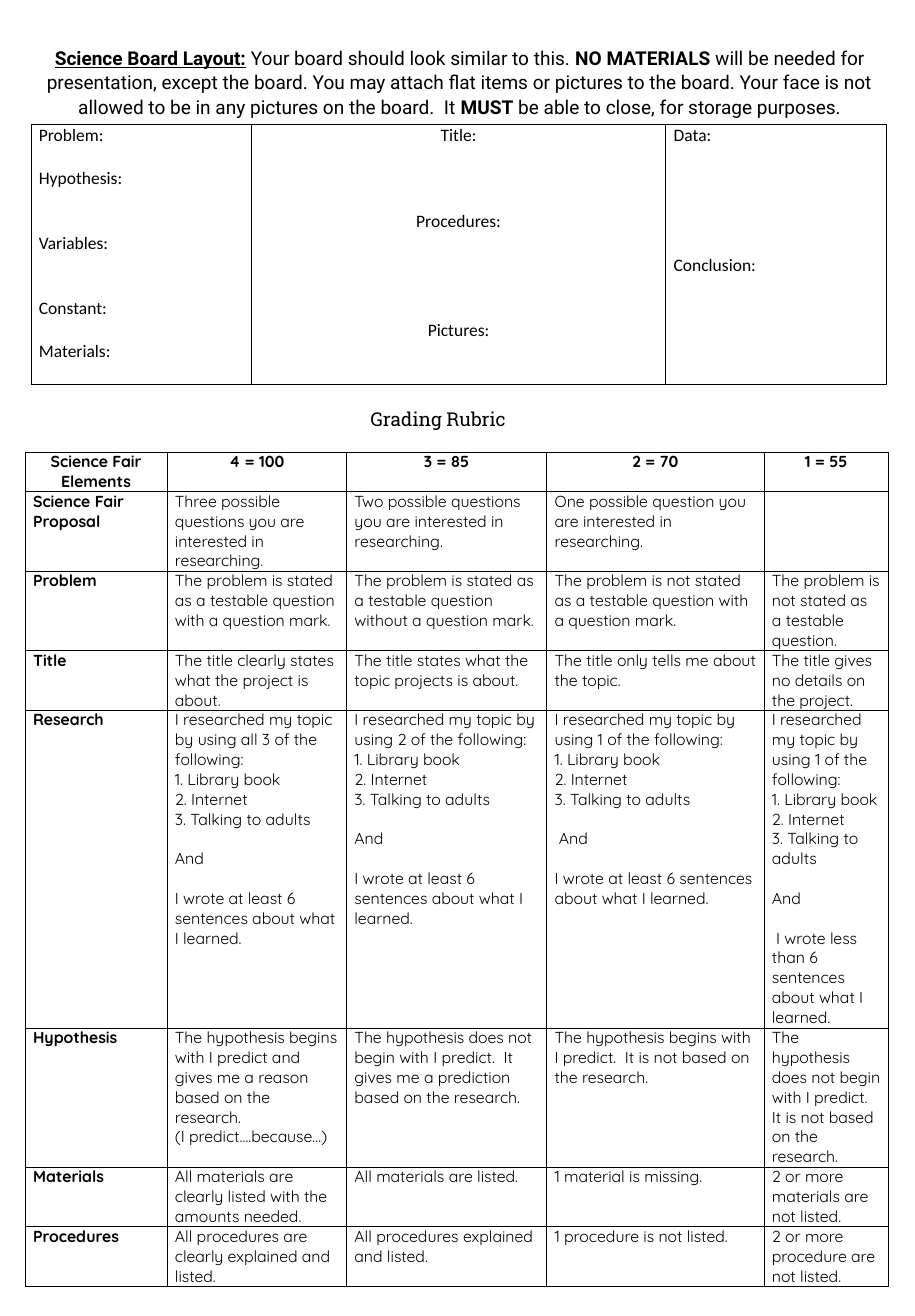
from lxml.etree import SubElement
from pptx import Presentation
from pptx.dml.color import RGBColor
from pptx.enum.text import MSO_ANCHOR, PP_ALIGN
from pptx.oxml.ns import qn
from pptx.util import Inches, Pt

# Content
INTRO = [
    ("Science Board Layout:", {"bold": True, "underline": True}),
    (" Your board should look similar to this. ", {}),
    ("NO MATERIALS ", {"bold": True}),
    ("will be needed for presentation, except the board. You may attach flat items or "
     "pictures to the board. Your face is not allowed to be in any pictures on the board.  It ", {}),
    ("MUST", {"bold": True}),
    (" be able to close, for storage purposes.", {}),
]
RUBRIC_TITLE = "Grading Rubric"

# Board panels: (empty lines above, label)
BOARD = [
    [(0, "Problem:"), (1, "Hypothesis:"), (2, "Variables:"), (2, "Constant:"), (1, "Materials:")],
    [(0, "Title:"), (3, "Procedures:"), (4, "Pictures:")],
    [(0, "Data:"), (5, "Conclusion:")],
]
BOARD_COLUMNS = [1.93, 3.62, 1.93]
BOARD_LINES = 12


def research(amount, joiner, result):
    """One research cell: the question, the sources, then the writing task."""
    sources = ["Library book", "Internet", "Talking to adults"]
    return ([(0, f"I researched my topic by using {amount} of the following:")]
            + [(0, f"{number}. {source}") for number, source in enumerate(sources, 1)]
            + [(1, joiner), (1, result)])


SIX_SENTENCES = "I wrote at least 6 sentences about what I learned."
RUBRIC = [
    ["Science Fair Elements", "4 = 100", "3 = 85", "2 = 70", "1 = 55"],
    ["Science Fair Proposal",
     "Three possible questions you are interested in researching.",
     "Two possible questions you are interested in researching.",
     "One possible question you are interested in researching.",
     ""],
    ["Problem",
     "The problem is stated as a testable question with a question mark.",
     "The problem is stated as a testable question without a question mark.",
     "The problem is not stated as a testable question with a question mark.",
     "The problem is not stated as a testable question."],
    ["Title",
     "The title clearly states what the project is about.",
     "The title states what the topic projects is about.",
     "The title only tells me about the topic.",
     "The title gives no details on the project."],
    ["Research",
     research("all 3", "And", SIX_SENTENCES),
     research("2", "And", SIX_SENTENCES),
     research("1", " And", SIX_SENTENCES),
     research("1", "And", " I wrote less than 6 sentences about what I learned.")],
    ["Hypothesis",
     [(0, "The hypothesis begins with I predict and gives me a reason based on the research."),
      (0, "(I predict….because…)")],
     "The hypothesis does not begin with I predict.  It gives me a prediction based on the research.",
     "The hypothesis begins with I predict.  It is not based on the research.",
     "The hypothesis does not begin with I predict.  It is not based on the research."],
    ["Materials",
     "All materials are clearly listed with the amounts needed.",
     "All materials are listed.",
     "1 material is missing.",
     "2 or more materials are not listed."],
    ["Procedures",
     "All procedures are clearly explained and listed.",
     "All procedures explained and listed.",
     "1 procedure is not listed.",
     "2 or more procedure are not listed."],
]
RUBRIC_COLUMNS = [1.24, 1.57, 1.75, 1.9, 1.09]
RUBRIC_LINES = [2, 4, 4, 3, 16, 7, 3, 3]

# Formats
BLACK = "000000"
INTRO_FONT = {"name": "Roboto", "size": Pt(12), "bold": False}
HEADING_FONT = {"name": "Roboto Slab", "size": Pt(12)}
BOARD_FONT = {"name": "Calibri", "size": Pt(11)}
RUBRIC_FONT = {"name": "Quicksand", "size": Pt(10)}
BOARD_LINE, RUBRIC_LINE = 13.6, 12.5  # line heights in points


def color(value):
    return RGBColor.from_string(value)


def add_span(para, text, formats):
    span = para.add_run()
    span.text = text
    for name, value in formats.items():
        setattr(span.font, name, value)
    span.font.color.rgb = color(BLACK)


def add_text_box(page, left, top, width, height, spans, anchor=MSO_ANCHOR.TOP):
    frame = page.shapes.add_textbox(*map(Inches, (left, top, width, height))).text_frame
    frame.word_wrap = True
    frame.vertical_anchor = anchor
    for side in ("left", "top", "right", "bottom"):
        setattr(frame, f"margin_{side}", Inches(0.1))
    para = frame.paragraphs[0]
    para.alignment = PP_ALIGN.CENTER
    for text, formats in spans:
        add_span(para, text, formats)
    return para


def style_cell(cell):
    """Thin black borders, no fill, narrow side margins."""
    properties = cell._tc.get_or_add_tcPr()
    for side in ("lnL", "lnR", "lnT", "lnB"):
        line = SubElement(properties, qn(f"a:{side}"), w=str(Pt(0.5)))
        fill = SubElement(line, qn("a:solidFill"))
        SubElement(fill, qn("a:srgbClr"), val=BLACK)
    cell.fill.background()
    cell.margin_left = cell.margin_right = Inches(0.07)
    cell.margin_top = cell.margin_bottom = 0


def fill_cell(cell, content, formats, line_height, alignment):
    entries = [(0, content)] if isinstance(content, str) else content
    for index, (gap, text) in enumerate(entries):
        para = cell.text_frame.paragraphs[0] if index == 0 else cell.text_frame.add_paragraph()
        para.alignment = alignment
        para.space_before = Pt(gap * line_height)
        if text:
            add_span(para, text, formats)


def add_grid(page, left, top, columns, line_counts, line_height):
    heights = [Pt(count * line_height) for count in line_counts]
    table = page.shapes.add_table(len(heights), len(columns), Inches(left), Inches(top),
                                  Inches(sum(columns)), sum(heights)).table
    table.first_row = table.horz_banding = False
    for column, width in zip(table.columns, columns):
        column.width = Inches(width)
    for row, height in zip(table.rows, heights):
        row.height = height
    for cell in table.iter_cells():
        style_cell(cell)
    return table


def main():
    deck = Presentation()
    deck.slide_width, deck.slide_height = Inches(8), Inches(11.5)
    page = deck.slides.add_slide(deck.slide_layouts[6])

    # Introduction
    intro = add_text_box(page, 0.17, 0.17, 7.7, 1.08,
                         [(text, INTRO_FONT | extra) for text, extra in INTRO], MSO_ANCHOR.MIDDLE)
    intro.line_spacing = 1.08
    intro.space_after = Pt(8)

    # Board layout, with a centred middle panel
    board = add_grid(page, 0.27, 1.09, BOARD_COLUMNS, [BOARD_LINES], BOARD_LINE)
    for column, labels in enumerate(BOARD):
        alignment = PP_ALIGN.CENTER if column == 1 else PP_ALIGN.LEFT
        fill_cell(board.cell(0, column), labels, BOARD_FONT, BOARD_LINE, alignment)

    # Grading rubric, with a bold header row and first column
    rubric = add_grid(page, 0.22, 3.95, RUBRIC_COLUMNS, RUBRIC_LINES, RUBRIC_LINE)
    for row, contents in enumerate(RUBRIC):
        alignment = PP_ALIGN.CENTER if row == 0 else PP_ALIGN.LEFT
        for column, content in enumerate(contents):
            formats = RUBRIC_FONT | {"bold": row == 0 or column == 0}
            fill_cell(rubric.cell(row, column), content, formats, RUBRIC_LINE, alignment)
    add_text_box(page, 0.56, 3.46, 6.54, 0.3, [(RUBRIC_TITLE, HEADING_FONT)])

    deck.save("out.pptx")


if __name__ == "__main__":
    main()
